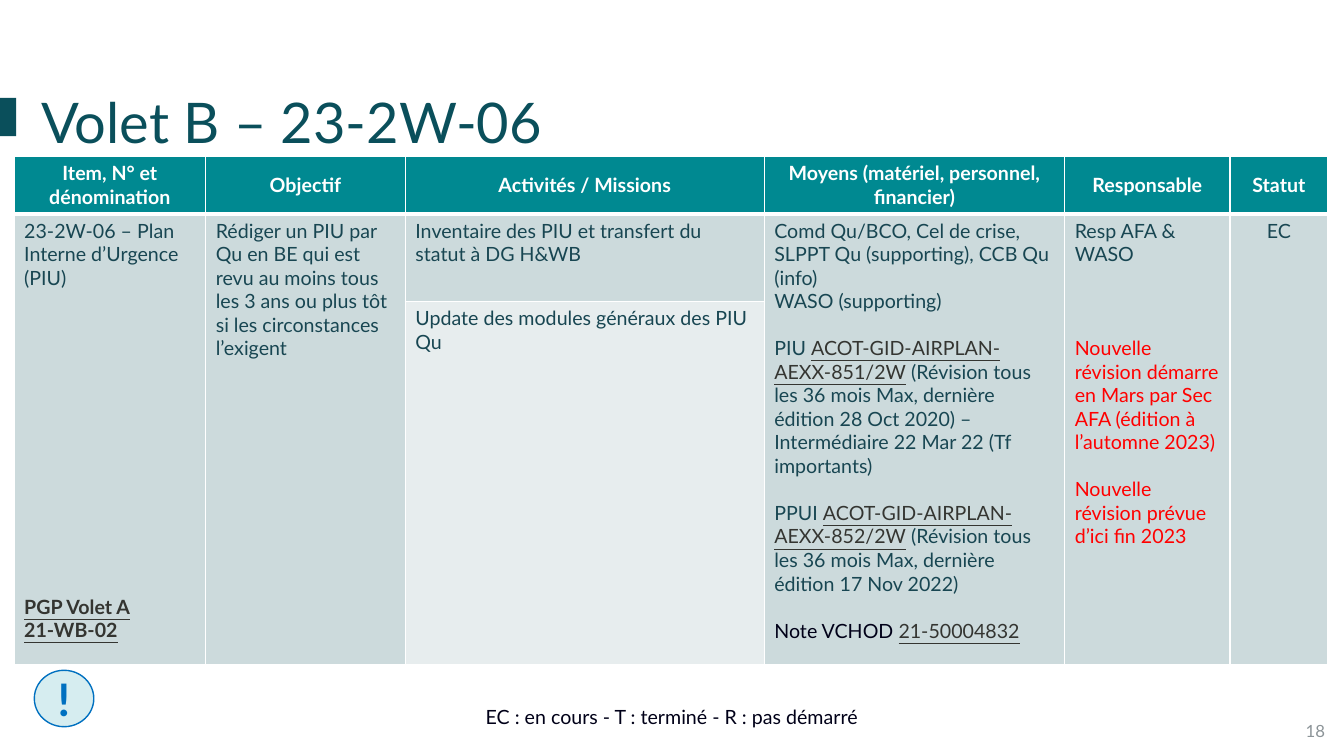
from itertools import product

from lxml import etree
from pptx import Presentation
from pptx.dml.color import RGBColor
from pptx.enum.shapes import MSO_SHAPE
from pptx.enum.text import MSO_ANCHOR, PP_ALIGN
from pptx.oxml.ns import qn
from pptx.util import Inches, Pt

LEFT, CENTER, RIGHT = PP_ALIGN.LEFT, PP_ALIGN.CENTER, PP_ALIGN.RIGHT
TOP, MIDDLE, BOTTOM = MSO_ANCHOR.TOP, MSO_ANCHOR.MIDDLE, MSO_ANCHOR.BOTTOM
RECTANGLE, CONNECTOR_DISC = MSO_SHAPE.RECTANGLE, MSO_SHAPE.FLOWCHART_CONNECTOR

THEME = {
    "font": "Lato",
    "line_height": 16.8,
    "fills": {"accent": "0A4F5B", "header": "008991", "band": "CCDADC",
              "light": "E7EDEE", "alert": "D6EDF0"},
    "lines": {"alert": "0070C0", "grid": "FFFFFF"},
    "text": {
        "title": {"size": 40, "color": "0A4F5B"},
        "number": {"size": 12, "color": "8C9498"},
        "alert": {"size": 32, "color": "0070C0", "bold": True},
        "header": {"size": 14, "color": "FFFFFF", "bold": True},
        "body": {"size": 14, "color": "184652"},
        "dark": {"size": 14, "color": "000018"},
        "red": {"size": 14, "color": "FF0000"},
        "link": {"size": 14, "color": "343531", "underline": True},
        "bold_link": {"size": 14, "color": "343531", "bold": True, "underline": True},
    },
}

TITLE = "Volet B – 23-2W-06"
LEGEND = "EC : en cours - T : terminé - R : pas démarré"
SLIDE_NUMBER = "18"
HEADERS = ["Item, N° et dénomination", "Objectif", "Activités / Missions",
           "Moyens (matériel, personnel, financier)", "Responsable", "Statut"]
# Each paragraph: (lines of space before, [(text, style), ...])
ITEM = [
    (0, [("23-2W-06 – Plan Interne d’Urgence (PIU)", "body")]),
    (13, [("PGP Volet A\n21-WB-02", "bold_link")]),
]
OBJECTIVE = [(0, [("Rédiger un PIU par Qu en BE qui est revu au moins tous les 3 ans "
                   "ou plus tôt si les circonstances l’exigent", "body")])]
INVENTORY = [(0, [("Inventaire des PIU et transfert du statut à DG H&WB", "body")])]
UPDATE = [(0, [("Update des modules généraux des PIU Qu", "body")])]
MEANS = [
    (0, [("Comd Qu/BCO, Cel de crise, SLPPT Qu (supporting), CCB Qu (info)\n"
          "WASO (supporting)", "body")]),
    (1, [("PIU ", "body"), ("ACOT-GID-AIRPLAN-AEXX-851/2W", "link"),
         (" (Révision tous les 36 mois Max, dernière édition 28 Oct 2020) – "
          "Intermédiaire 22 Mar 22 (Tf importants)", "body")]),
    (1, [("PPUI ", "body"), ("ACOT-GID-AIRPLAN-AEXX-852/2W", "link"),
         (" (Révision tous les 36 mois Max, dernière édition 17 Nov 2022)", "body")]),
    (1, [("Note VCHOD ", "dark"), ("21-50004832", "link")]),
]
OWNER = [
    (0, [("Resp AFA & WASO", "body")]),
    (3, [("Nouvelle révision démarre en Mars par Sec AFA (édition à l’automne 2023)",
          "red")]),
    (1, [("Nouvelle révision prévue d’ici fin 2023", "red")]),
]
STATUS = [(0, [("EC", "body")])]
ACTIVITY_COLUMN, STATUS_COLUMN = 2, 5
COLUMN_WIDTHS = [1.9, 1.98, 3.56, 2.98, 1.64, 0.97]
ROW_HEIGHTS = [0.57, 0.87, 3.6]


def rgb(value):
    return RGBColor.from_string(value)


def write(frame, paragraphs, align=LEFT):
    frame.word_wrap = True
    for index, (gap, runs) in enumerate(paragraphs):
        paragraph = frame.paragraphs[0] if index == 0 else frame.add_paragraph()
        paragraph.alignment = align
        if gap:
            paragraph.space_before = Pt(gap * THEME["line_height"])
        for text, style in runs:
            formats = dict(THEME["text"][style])
            color, size = formats.pop("color"), formats.pop("size")
            formats.update(name=THEME["font"], size=Pt(size))
            for line_index, line in enumerate(text.split("\n")):
                if line_index:
                    paragraph.add_line_break()
                run = paragraph.add_run()
                run.text = line
                for name, value in formats.items():
                    setattr(run.font, name, value)
                run.font.color.rgb = rgb(color)


def add_label(slide, box, text, style, align, anchor):
    frame = slide.shapes.add_textbox(*map(Inches, box)).text_frame
    frame.vertical_anchor = anchor
    write(frame, [(0, [(text, style)])], align)


def add_block(slide, preset, box, fill):
    block = slide.shapes.add_shape(preset, *map(Inches, box))
    block.shadow.inherit = False
    block.fill.solid()
    block.fill.fore_color.rgb = rgb(THEME["fills"][fill])
    block.line.fill.background()
    return block


def set_borders(cell, row):
    widths = {"a:lnL": 1, "a:lnR": 1, "a:lnT": 3 if row == 1 else 1,
              "a:lnB": 3 if row == 0 else 1}
    properties = cell._tc.get_or_add_tcPr()
    for position, (tag, width) in enumerate(widths.items()):
        border = etree.Element(qn(tag), w=str(Pt(width)))
        fill = etree.SubElement(border, qn("a:solidFill"))
        etree.SubElement(fill, qn("a:srgbClr"), val=THEME["lines"]["grid"])
        properties.insert(position, border)


def add_plan(slide):
    table = slide.shapes.add_table(
        len(ROW_HEIGHTS), len(COLUMN_WIDTHS), Inches(0.14), Inches(1.55),
        Inches(sum(COLUMN_WIDTHS)), Inches(sum(ROW_HEIGHTS))).table
    for column, width in zip(table.columns, COLUMN_WIDTHS):
        column.width = Inches(width)
    for row, height in zip(table.rows, ROW_HEIGHTS):
        row.height = Inches(height)

    for row, column in product(range(len(ROW_HEIGHTS)), range(len(COLUMN_WIDTHS))):
        cell = table.cell(row, column)
        is_update = row == 2 and column == ACTIVITY_COLUMN
        fill = "header" if row == 0 else "light" if is_update else "band"
        cell.fill.solid()
        cell.fill.fore_color.rgb = rgb(THEME["fills"][fill])
        set_borders(cell, row)

    for column, header in enumerate(HEADERS):
        cell = table.cell(0, column)
        cell.vertical_anchor = MIDDLE
        write(cell.text_frame, [(0, [(header, "header")])], CENTER)

    details = [ITEM, OBJECTIVE, INVENTORY, MEANS, OWNER, STATUS]
    for column, paragraphs in enumerate(details):
        cell = table.cell(1, column)
        if column != ACTIVITY_COLUMN:
            cell.merge(table.cell(2, column))
        write(cell.text_frame, paragraphs, CENTER if column == STATUS_COLUMN else LEFT)
    write(table.cell(2, ACTIVITY_COLUMN).text_frame, UPDATE)


def main():
    deck = Presentation()
    deck.slide_width, deck.slide_height = Inches(13.33), Inches(7.5)
    slide = deck.slides.add_slide(deck.slide_layouts[6])

    add_block(slide, RECTANGLE, (0, 0.97, 0.16, 0.38), "accent")
    add_label(slide, (10.24, 7.05, 3, 0.4), SLIDE_NUMBER, "number", RIGHT, MIDDLE)
    add_label(slide, (0.31, 0.82, 12.35, 0.77), TITLE, "title", LEFT, TOP)
    add_label(slide, (0, 6.89, 13.33, 0.39), LEGEND, "dark", CENTER, BOTTOM)

    alert = add_block(slide, CONNECTOR_DISC, (0.34, 6.65, 0.59, 0.56), "alert")
    alert.line.color.rgb = rgb(THEME["lines"]["alert"])
    alert.line.width = Pt(1)
    alert.text_frame.vertical_anchor = MIDDLE
    write(alert.text_frame, [(0, [("!", "alert")])], CENTER)

    add_plan(slide)
    deck.save("out.pptx")


if __name__ == "__main__":
    main()
